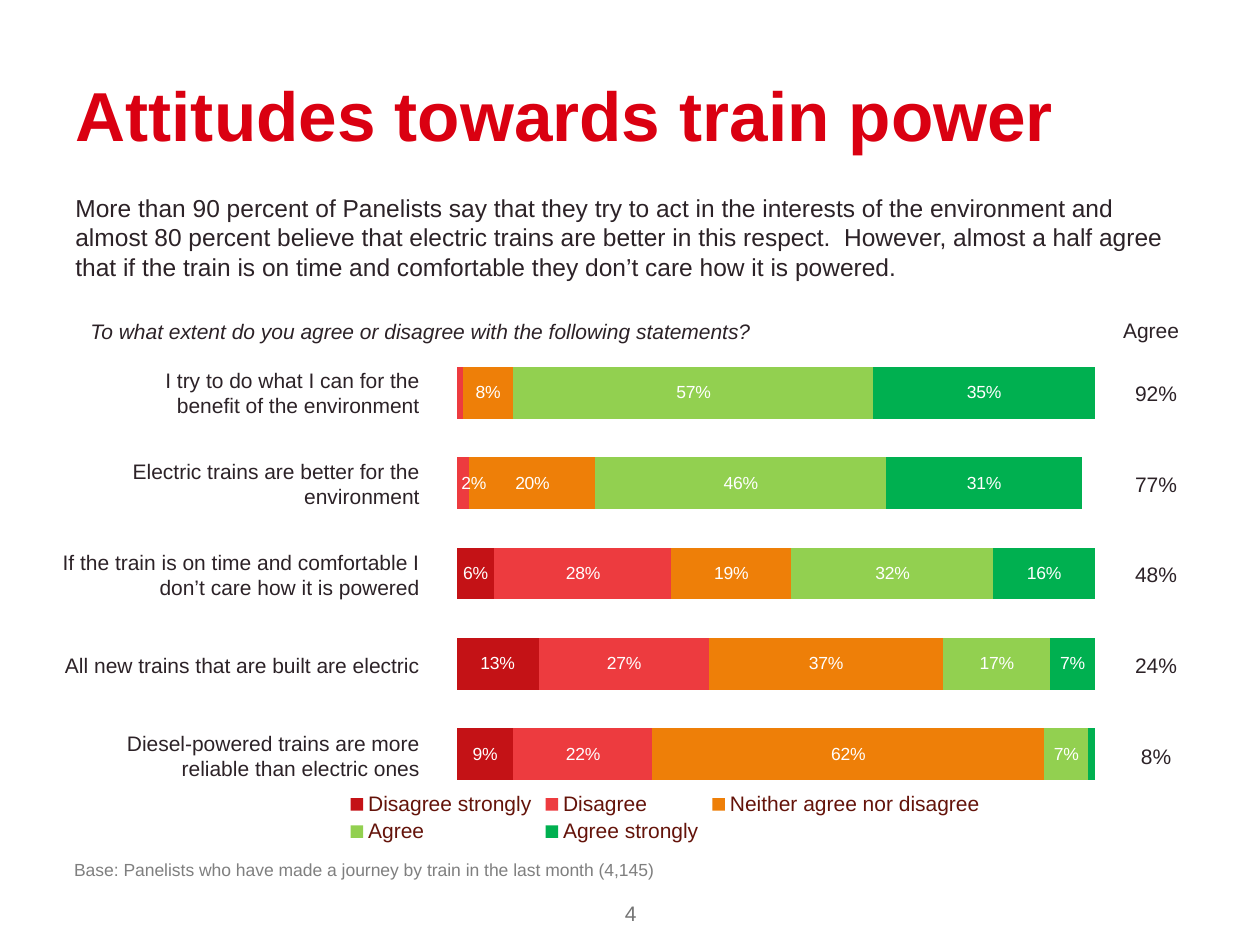
"""Build the slide on attitudes towards train power."""
from lxml import etree
from pptx import Presentation
from pptx import util as u
from pptx.chart.data import CategoryChartData
from pptx.dml.color import RGBColor
from pptx.enum import chart as charts, text
from pptx.oxml import ns

THEME = {
    "font": "Arial",
    "red": "DA0011", "ink": "2C2227", "note": "7F7F7F", "page": "747474",
    "legend": "64130A", "label": "FFFFFF",
    "title_size": 39.6, "intro_size": 14, "body_size": 12, "small_size": 10,
}
TITLE = "Attitudes towards train power"
INTRO = ("More than 90 percent of Panelists say that they try to act in the interests of the "
         "environment and almost 80 percent believe that electric trains are better in this "
         "respect.  However, almost a half agree that if the train is on time and comfortable "
         "they don’t care how it is powered.")
QUESTION = "To what extent do you agree or disagree with the following statements?"
BASE = "Base: Panelists who have made a journey by train in the last month (4,145)"
STATEMENTS = [
    ("I try to do what I can for the benefit of the environment", 2.56, 0.5, "92%"),
    ("Electric trains are better for the environment", 2.56, 0.5, "77%"),
    ("If the train is on time and comfortable I don’t care how it is powered", 3.08, 0.5, "48%"),
    ("All new trains that are built are electric", 3.08, 0.3, "24%"),
    ("Diesel-powered trains are more reliable than electric ones", 3.08, 0.5, "8%"),
]
ANSWERS = [
    ("Disagree strongly", "C41216", (0.09, 0.13, 0.06, None, None)),
    ("Disagree", "ED3B3F", (0.22, 0.27, 0.28, 0.02, 0.01)),
    ("Neither agree nor disagree", "EE7F08", (0.62, 0.37, 0.19, 0.2, 0.08)),
    ("Agree", "92D050", (0.07, 0.17, 0.32, 0.46, 0.57)),
    ("Agree strongly", "00B050", (0.01, 0.07, 0.16, 0.31, 0.35)),
]
HIDDEN_LABELS = [(1, 4), (4, 0)]
SHIFTED_LABEL = (1, 3, 0.01)
FIRST_ROW, ROW_STEP, LABEL_RIGHT = 3.12, 0.72, 3.43


def style(font, size, color):
    font.name, font.size = THEME["font"], u.Pt(size)
    font.color.rgb = RGBColor.from_string(THEME[color])


def write(shape, words, size="body_size", color="ink", align="LEFT", bold=False, italic=False):
    frame = shape.text_frame
    frame.word_wrap = True
    paragraph = frame.paragraphs[0]
    paragraph.alignment = text.PP_ALIGN[align]
    run = paragraph.add_run()
    run.text = words
    style(run.font, THEME[size], color)
    run.font.bold, run.font.italic = bold, italic


def add_text(slide, box, words, **look):
    write(slide.shapes.add_textbox(*map(u.Inches, box)), words, **look)


def add_layout(parent, position, **values):
    layout = etree.Element(ns.qn("c:layout"))
    manual = etree.SubElement(layout, ns.qn("c:manualLayout"))
    for name, value in values.items():
        etree.SubElement(manual, ns.qn("c:" + name)).set("val", str(value))
    parent.insert(position, layout)


def point_label(plot, series, point):
    style(plot.series[series].points[point].data_label.font, THEME["small_size"], "label")
    labels = plot.series[series].data_labels._element
    return labels.xpath(f"c:dLbl[c:idx/@val='{point}']")[0]


def add_answers_chart(slide):
    data = CategoryChartData(number_format="0%")
    data.categories = [str(number + 1) for number in range(len(STATEMENTS))]
    for name, _, values in ANSWERS:
        data.add_series(name, values)
    box = map(u.Inches, (0.92, 2.46, 8.72, 4.27))
    chart = slide.shapes.add_chart(charts.XL_CHART_TYPE.BAR_STACKED, *box, data).chart
    style(chart.font, THEME["small_size"], "legend")
    chart.has_title = False
    chart.has_legend = True
    chart.legend.position = charts.XL_LEGEND_POSITION.BOTTOM
    chart.legend.include_in_layout = False
    style(chart.legend.font, THEME["body_size"], "legend")
    chart.category_axis.visible = chart.value_axis.visible = False
    chart.value_axis.has_major_gridlines = False
    chart.value_axis.minimum_scale, chart.value_axis.maximum_scale = 0, 1.2

    plot = chart.plots[0]
    plot.gap_width, plot.overlap, plot.vary_by_categories = 75, 100, False
    for series, (_, color, _) in zip(plot.series, ANSWERS):
        series.format.fill.solid()
        series.format.fill.fore_color.rgb = RGBColor.from_string(color)
        labels = series.data_labels
        labels.show_value = True
        labels.number_format, labels.number_format_is_linked = "0%", False
        style(labels.font, THEME["small_size"], "label")
    for series, point in HIDDEN_LABELS:
        label = point_label(plot, series, point)
        for child in list(label)[1:]:
            label.remove(child)
        etree.SubElement(label, ns.qn("c:delete")).set("val", "1")
    series, point, shift = SHIFTED_LABEL
    add_layout(point_label(plot, series, point), 1, x=shift, y=0)

    area = chart._chartSpace.chart.plotArea
    for layout in area.findall(ns.qn("c:layout")):
        area.remove(layout)
    add_layout(area, 0, layoutTarget="inner", xMode="edge", yMode="edge",
               x=0.31, y=0.07, w=0.69, h=0.84)


def main():
    presentation = Presentation()
    presentation.slide_width, presentation.slide_height = u.Inches(10), u.Inches(7.5)
    slide = presentation.slides.add_slide(presentation.slide_layouts[5])
    add_answers_chart(slide)

    title = slide.shapes.title
    title.left, title.top, title.width, title.height = map(u.Inches, (0.5, 0.53, 9, 0.74))
    title.text_frame.vertical_anchor = text.MSO_ANCHOR.MIDDLE
    write(title, TITLE, size="title_size", color="red", bold=True)

    add_text(slide, (0.5, 1.48, 8.84, 0.82), INTRO, size="intro_size")
    add_text(slide, (0.62, 2.48, 8, 0.3), QUESTION, italic=True)
    add_text(slide, (8.79, 2.47, 0.69, 0.3), "Agree", align="CENTER")
    for row, (statement, width, height, agree) in enumerate(STATEMENTS):
        middle = FIRST_ROW + row * ROW_STEP
        add_text(slide, (LABEL_RIGHT - width, middle - height / 2, width, height),
                 statement, align="RIGHT")
        add_text(slide, (8.83, middle - 0.15, 0.69, 0.3), agree, align="CENTER")
    add_text(slide, (0.49, 6.77, 6.6, 0.27), BASE, size="small_size", color="note")
    add_text(slide, (3.42, 7.1, 3.17, 0.34), "4", color="page", align="CENTER")
    presentation.save("out.pptx")


if __name__ == "__main__":
    main()
